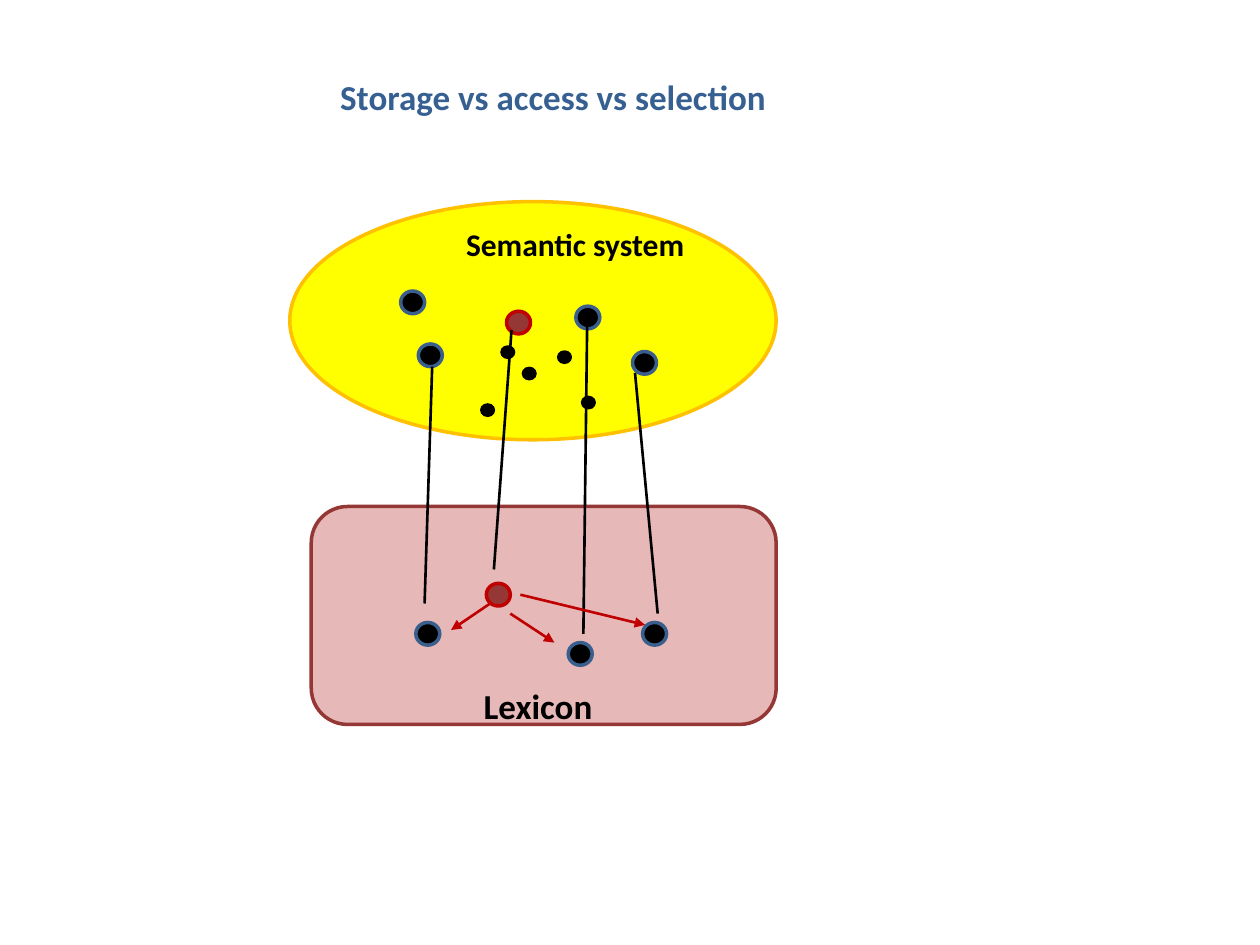
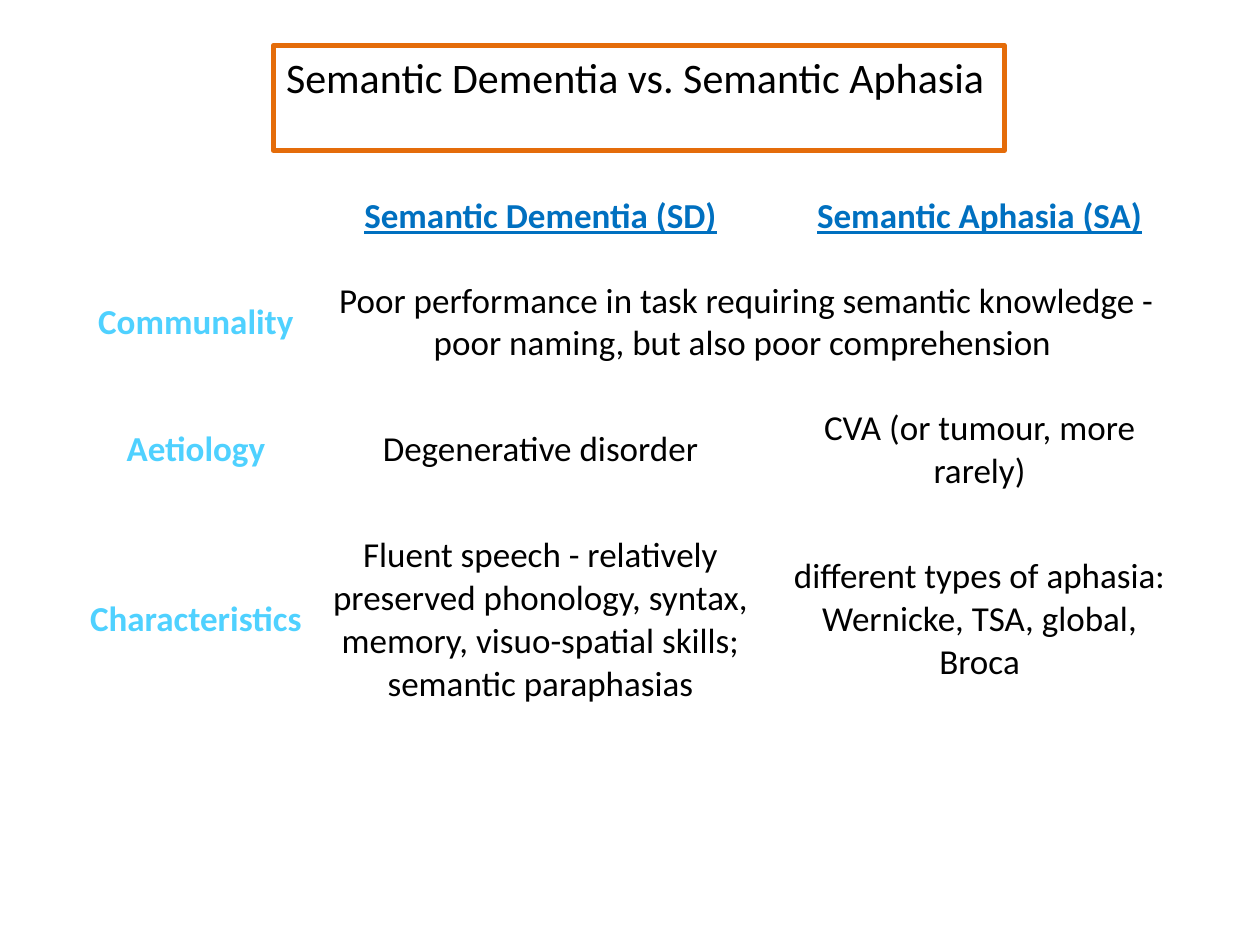
import pptx
import pptx.dml.color
import pptx.enum.shapes
import pptx.enum.text
import pptx.oxml
import pptx.oxml.ns
import pptx.util

PX = 9144
FONT = "Calibri"
BLACK, RED, MAROON, BLUE = "000000", "C00000", "953735", "3A5F8C"
HEADING, LABEL = "0070C0", "4FD1FF"
SHAPE = pptx.enum.shapes.MSO_SHAPE
ALIGN = pptx.enum.text.PP_ALIGN
ANCHOR = pptx.enum.text.MSO_ANCHOR


def rgb(value):
    return pptx.dml.color.RGBColor.from_string(value)


def write(tf, text, size, color, bold=False, underline=False, align=ALIGN.LEFT):
    tf.text = text
    p = tf.paragraphs[0]
    p.alignment = align
    font = p.runs[0].font
    font.name = FONT
    font.size = pptx.util.Pt(size)
    font.bold = bold
    font.underline = underline
    font.color.rgb = rgb(color)


prs = pptx.Presentation()
prs.slide_width, prs.slide_height = 1000 * PX, 750 * PX

titles = [
    ("Storage vs access vs selection", (260, 55, 368, 44), 20, "376092", True),
    ("Semantic Dementia vs. Semantic Aphasia", (217, 36, 580, 50), 24, BLACK, False),
]
for text, box, size, color, bold in titles:
    s = prs.slides.add_slide(prs.slide_layouts[5])
    sp = s.shapes.title
    sp.left, sp.top, sp.width, sp.height = [v * PX for v in box]
    tf = sp.text_frame
    write(tf, text, size, color, bold)
    tf.word_wrap = False
    tf.auto_size = pptx.enum.text.MSO_AUTO_SIZE.SHAPE_TO_FIT_TEXT
    tf.vertical_anchor = ANCHOR.TOP

diagram, comparison = prs.slides
comparison.shapes.title.line.color.rgb = rgb("E46C0A")
comparison.shapes.title.line.width = pptx.util.Pt(3)

systems = [
    (SHAPE.OVAL, 230, 160, 386, 189, "FFFF00", "FFC000"),
    (SHAPE.ROUNDED_RECTANGLE, 247, 402, 369, 173, "E6B9B8", MAROON),
]
nodes = [(318, 231), (332, 273), (502, 279), (457, 243),
         (330, 494), (451, 510), (510, 494)]
selected = [(402, 247), (386, 463)]
features = [(397, 274), (414, 291), (381, 320), (461, 314), (442, 278)]

ovals = [(SHAPE.OVAL, x, y, 19, 18, BLACK, BLUE) for x, y in nodes]
ovals += [(SHAPE.OVAL, x, y, 19, 18, MAROON, RED) for x, y in selected]
ovals += [(SHAPE.OVAL, x, y, 12, 11, BLACK, None) for x, y in features]
for kind, x, y, w, h, fill, line in systems + ovals:
    sp = diagram.shapes.add_shape(kind, x * PX, y * PX, w * PX, h * PX)
    sp.shadow.inherit = False
    sp.fill.solid()
    sp.fill.fore_color.rgb = rgb(fill)
    if line:
        sp.line.color.rgb = rgb(line)
        sp.line.width = pptx.util.Pt(2)
    else:
        sp.line.fill.background()

labels = [
    ("Semantic system", 360, 174, 195, 40, 18),
    ("Lexicon", 374, 538, 107, 44, 20),
]
for text, x, y, w, h, size in labels:
    tf = diagram.shapes.add_textbox(x * PX, y * PX, w * PX, h * PX).text_frame
    write(tf, text, size, BLACK, True)
    tf.word_wrap = False
    tf.auto_size = pptx.enum.text.MSO_AUTO_SIZE.SHAPE_TO_FIT_TEXT

links = [(343, 291, 337, 479), (406, 262, 392, 452),
         (504, 296, 522, 487), (466, 258, 463, 503)]
arrows = [(405, 487, 440, 510), (389, 479, 358, 500), (413, 472, 512, 496)]
for ends in links + arrows:
    is_arrow = ends in arrows
    cx = diagram.shapes.add_connector(
        pptx.enum.shapes.MSO_CONNECTOR.STRAIGHT, *[v * PX for v in ends])
    cx.line.color.rgb = rgb(RED if is_arrow else BLACK)
    cx.line.width = pptx.util.Pt(1.5)
    if is_arrow:
        ln = cx.line._get_or_add_ln()
        tail = pptx.oxml.ns.qn("a:tailEnd")
        ln.append(ln.makeelement(tail, {"type": "triangle"}))
    spPr = cx._element.spPr
    spPr.append(spPr.makeelement(pptx.oxml.ns.qn("a:effectLst"), {}))

columns = [209, 338, 32, 295]
line_height, gap = 34, 33
rows = [
    (1, "", "Semantic Dementia (SD)", "Semantic Aphasia (SA)"),
    (2, "Communality", "Poor performance in task requiring semantic knowledge - "
     "poor naming, but also poor comprehension ", ""),
    (2, "Aetiology", "Degenerative disorder", "CVA (or tumour, more rarely)"),
    (4, "Characteristics", "Fluent speech - relatively preserved phonology, syntax, "
     "memory, visuo-spatial skills; semantic paraphasias",
     "different types of aphasia: Wernicke, TSA, global, Broca"),
]
height = sum(row[0] * line_height + gap for row in rows)
table = comparison.shapes.add_table(
    2 * len(rows), len(columns), 51 * PX, 155 * PX,
    sum(columns) * PX, height * PX).table
table.first_row = False
table.horz_banding = False
for column, width in zip(table.columns, columns):
    column.width = width * PX
for cell in table.iter_cells():
    cell.fill.background()
    cell.margin_left = cell.margin_right = cell.margin_top = cell.margin_bottom = 0
    cell.vertical_anchor = ANCHOR.MIDDLE
for i, (lines, *texts) in enumerate(rows):
    table.rows[2 * i].height = lines * line_height * PX
    table.rows[2 * i + 1].height = gap * PX
    for col, text in zip((0, 1, 3), texts):
        if text:
            color = HEADING if i == 0 else LABEL if col == 0 else BLACK
            write(table.cell(2 * i, col).text_frame, text, 20, color,
                  color != BLACK, i == 0, ALIGN.CENTER)
table.cell(2, 1).merge(table.cell(2, 3))

prs.save("out.pptx")
